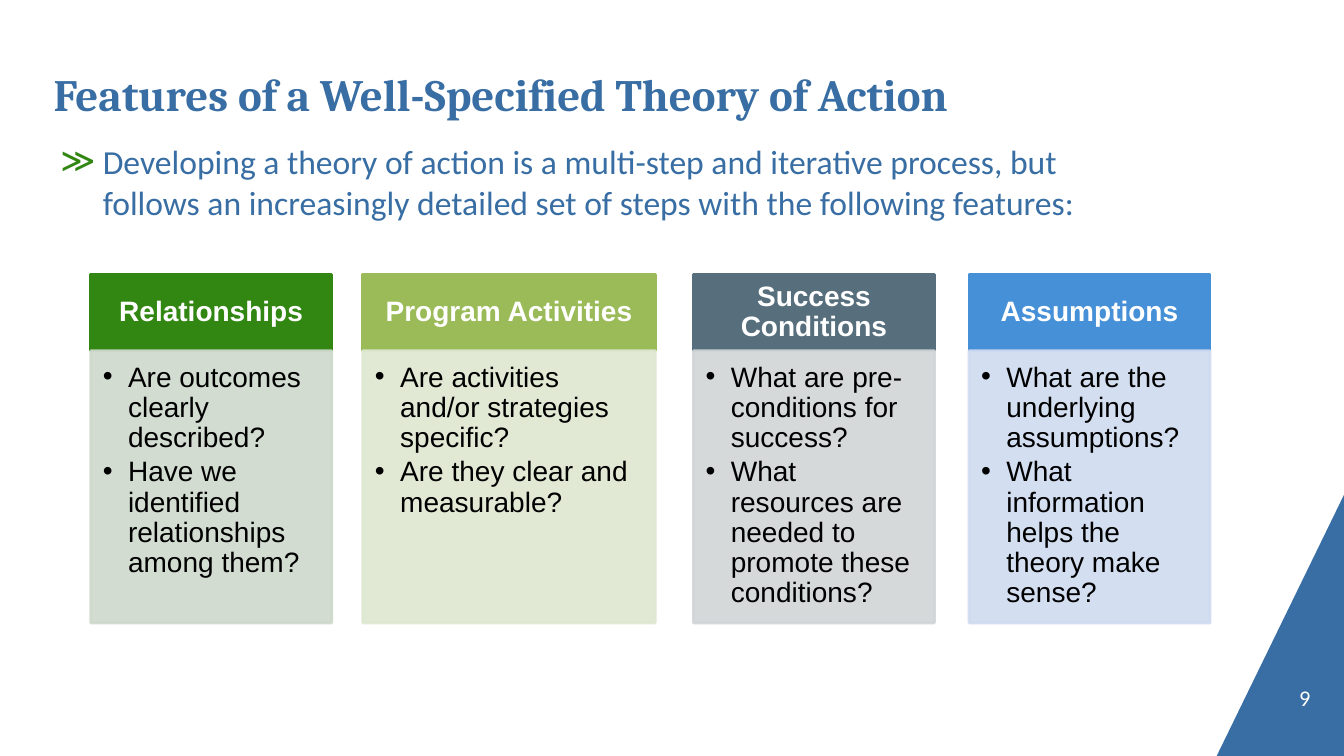
import pptx
import pptx.dml.color
import pptx.enum.shapes
import pptx.enum.text
import pptx.oxml.ns
import pptx.util
from lxml import etree

COLORS = {
    "blue": "386EA3", "green": "328612", "lime": "9BBB59", "slate": "576F7D",
    "sky": "4690D8", "pale_green": "CED9CC", "pale_lime": "DEE7D1",
    "pale_slate": "D1D5D7", "pale_sky": "CFDBF0", "white": "FFFFFF", "black": "000000",
}
ALIGN = pptx.enum.text.PP_ALIGN
ANCHOR = pptx.enum.text.MSO_ANCHOR
RECT = pptx.enum.shapes.MSO_SHAPE.RECTANGLE

# Left edge and width in columns, header text and colour, panel colour, questions
FEATURES = [
    (6.75, 17.93, "Relationships", "green", "pale_green",
     ["Are outcomes clearly described?",
      "Have we identified relationships among them?"]),
    (27, 21.75, "Program Activities", "lime", "pale_lime",
     ["Are activities and/or strategies specific?",
      "Are they clear and measurable?"]),
    (51.6, 17.93, "Success Conditions", "slate", "pale_slate",
     ["What are pre-conditions for success?",
      "What resources are needed to promote these conditions?"]),
    (72.1, 17.93, "Assumptions", "sky", "pale_sky",
     ["What are the underlying assumptions?",
      "What information helps the theory make sense?"]),
]
HEADER_TOP, HEADER_ROWS, PANEL_ROWS = 36.27, 10.13, 36


def rgb(name):
    return pptx.dml.color.RGBColor.from_string(COLORS[name])


def apply(obj, values):
    for key, value in values.items():
        setattr(obj, key, value)


def add_xml(parent, tag, **attrs):
    return etree.SubElement(parent, pptx.oxml.ns.qn(tag), **attrs)


class Deck:
    """Draws on the current slide over a grid of 100 columns by 100 rows."""

    def __init__(self, width, height):
        self.prs = pptx.Presentation()
        apply(self.prs, {"slide_width": pptx.util.Inches(width),
                         "slide_height": pptx.util.Inches(height)})
        self.s = self.prs.slides.add_slide(self.prs.slide_layouts[6])

    def x(self, columns):
        return round(self.prs.slide_width * columns / 100)

    def y(self, rows):
        return round(self.prs.slide_height * rows / 100)

    def box(self, left, top, width, height):
        return self.x(left), self.y(top), self.x(width), self.y(height)

    def paint(self, sp, color, opacity=100):
        sp.shadow.inherit = False
        for fill in (sp.fill, sp.line.fill):
            fill.solid()
            fill.fore_color.rgb = rgb(color)
        sp.line.width = pptx.util.Pt(2)
        if opacity < 100:
            for clr in sp._element.spPr.iter(pptx.oxml.ns.qn("a:srgbClr")):
                add_xml(clr, "a:alpha", val=str(opacity * 1000))

    def bullet(self, p, char, color, font, margin, hang):
        pPr = p._p.get_or_add_pPr()
        pPr.set("marL", str(pptx.util.Inches(margin)))
        pPr.set("indent", str(-pptx.util.Inches(hang)))
        add_xml(add_xml(pPr, "a:buClr"), "a:srgbClr", val=COLORS[color])
        add_xml(pPr, "a:buFont", typeface=font)
        add_xml(pPr, "a:buChar", char=char)

    def fill_text(self, sp, lines, font, size, color, bold=False, bullet=None,
                  insets=(0, 0, 0, 0), anchor=ANCHOR.TOP, **paragraph):
        """Fill a shape with paragraphs; insets are left, top, right, bottom inches."""
        tf = sp.text_frame
        apply(tf, {"word_wrap": True, "vertical_anchor": anchor})
        for side, inset in zip(("left", "top", "right", "bottom"), insets):
            setattr(tf, f"margin_{side}", pptx.util.Inches(inset))
        for i, line in enumerate(lines):
            p = tf.add_paragraph() if i else tf.paragraphs[0]
            if bullet:
                self.bullet(p, *bullet)
            apply(p, {"alignment": ALIGN.LEFT, **paragraph})
            r = p.add_run()
            r.text = line
            apply(r.font, {"name": font, "size": pptx.util.Pt(size), "bold": bold})
            r.font.color.rgb = rgb(color)

    def text(self, box, line, font, size, color, **style):
        self.fill_text(self.s.shapes.add_textbox(*self.box(*box)), [line],
                       font, size, color, **style)

    def panel(self, box, fill, lines, color, opacity=100, **style):
        sp = self.s.shapes.add_shape(RECT, *self.box(*box))
        self.paint(sp, fill, opacity)
        self.fill_text(sp, lines, "Arial", 20, color, line_spacing=0.9, **style)

    def corner(self, left, top, color):
        """Triangle in the bottom right corner of the slide."""
        fb = self.s.shapes.build_freeform(self.x(100), self.y(top))
        fb.add_line_segments([(self.x(left), self.y(100)), (self.x(100), self.y(100))])
        sp = fb.convert_to_shape()
        self.paint(sp, color)
        sp.line.fill.background()

    def feature(self, left, width, title, fill, pale, questions):
        self.panel((left, HEADER_TOP, width, HEADER_ROWS), fill, [title], "white",
                   bold=True, anchor=ANCHOR.MIDDLE, alignment=ALIGN.CENTER,
                   insets=(0.16, 0.09, 0.16, 0.09), space_after=pptx.util.Pt(7))
        self.panel((left, HEADER_TOP + HEADER_ROWS, width, PANEL_ROWS), pale,
                   questions, "black", opacity=90,
                   bullet=("•", "black", "Arial", 0.25, 0.25),
                   insets=(0.12, 0.12, 0.16, 0.17), space_after=pptx.util.Pt(3))


def main():
    deck = Deck(13.33, 7.5)
    deck.corner(90.53, 65.47, "blue")
    deck.text((4, 8.8, 82.3, 7.2), "Features of a Well-Specified Theory of Action",
              "Cambria", 32, "blue", bold=True, anchor=ANCHOR.MIDDLE)
    deck.text((3.9, 18.67, 82.35, 12),
              "Developing a theory of action is a multi-step and iterative process, but "
              "follows an increasingly detailed set of steps with the following features:",
              "Calibri", 24, "blue", bullet=("≫", "green", "Calibri", 0.5, 0.42))
    deck.text((90.1, 90, 7.4, 4), "9", "Calibri", 16, "white",
              anchor=ANCHOR.BOTTOM, alignment=ALIGN.RIGHT)
    for feature in FEATURES:
        deck.feature(*feature)
    deck.prs.save("out.pptx")


if __name__ == "__main__":
    main()
